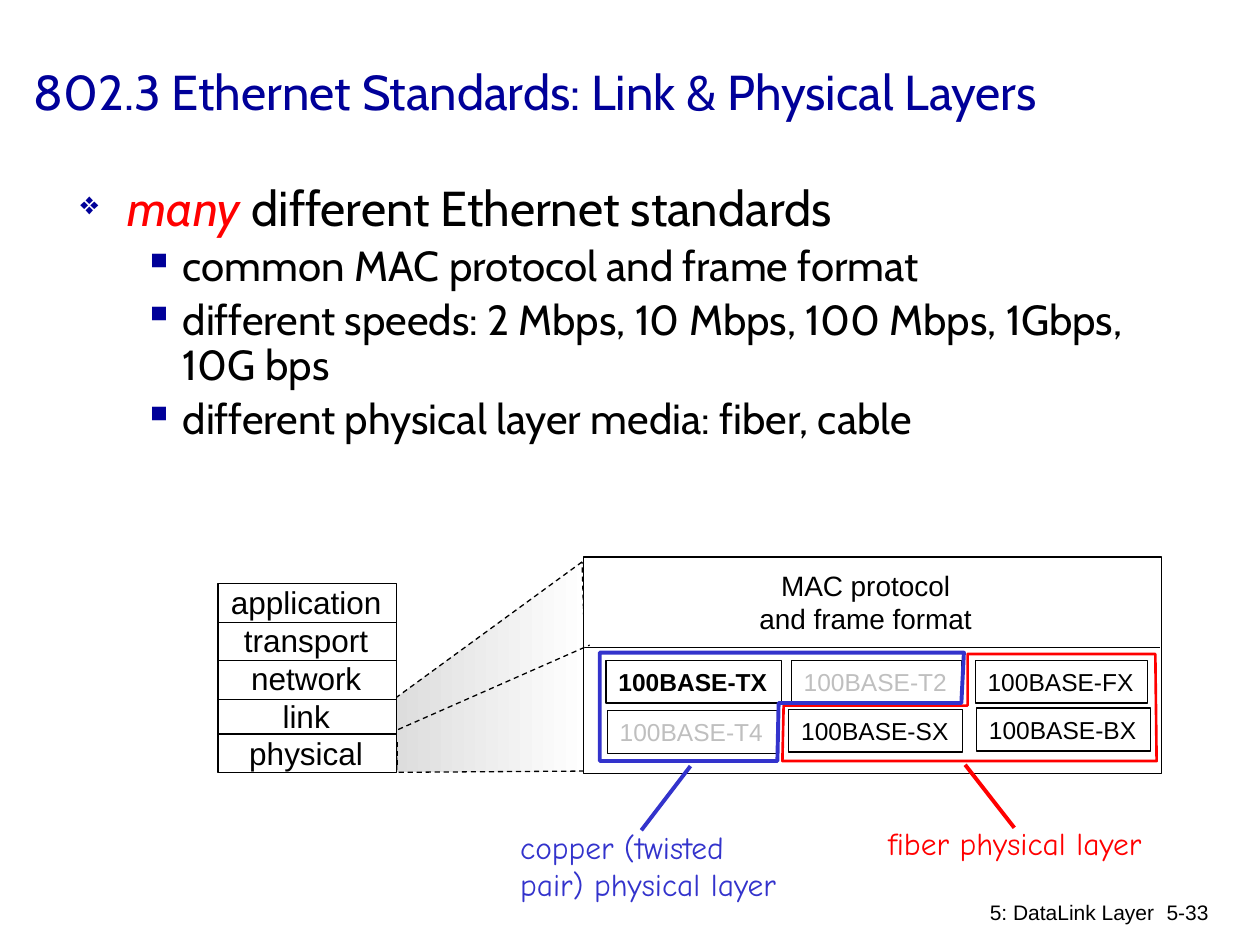
import lxml.etree
import pptx
import pptx.dml.color
import pptx.enum.dml
import pptx.enum.shapes
import pptx.enum.text
import pptx.oxml.ns
import pptx.util

Pt = pptx.util.Pt
RGBColor = pptx.dml.color.RGBColor
PP_ALIGN = pptx.enum.text.PP_ALIGN
qn = pptx.oxml.ns.qn

NAVY = RGBColor(0x00, 0x00, 0x99)
BLACK = RGBColor(0x00, 0x00, 0x00)
WHITE = RGBColor(0xFF, 0xFF, 0xFF)
RED = RGBColor(0xFF, 0x00, 0x00)
BLUE = RGBColor(0x33, 0x33, 0xCC)
MUTED = RGBColor(0xBF, 0xBF, 0xBF)
SHADE = RGBColor(0xDD, 0xDD, 0xDD)


class SlideBuilder:
    heading_font = "Cabin"
    label_font = "Arial"
    note_font = "Comic Neue"
    thin = 0.75

    def __init__(self, slide):
        self.slide = slide

    def style_font(self, font, name, size, color, bold=False):
        font.name, font.size, font.bold = name, Pt(size), bold
        font.color.rgb = color

    def style_line(self, line, color, width, dashed=False):
        line.color.rgb = color
        line.width = Pt(width)
        if dashed:
            line.dash_style = pptx.enum.dml.MSO_LINE.DASH

    def fill_text(self, frame, lines, name, size, color, align=PP_ALIGN.LEFT, bold=False):
        for index, line in enumerate(lines):
            paragraph = frame.paragraphs[0] if index == 0 else frame.add_paragraph()
            paragraph.text = line
            paragraph.alignment = align
            self.style_font(paragraph.font, name, size, color, bold)

    def text(self, box, lines, name, size, color, align=PP_ALIGN.LEFT, wrap=False):
        frame = self.slide.shapes.add_textbox(*map(Pt, box)).text_frame
        frame.word_wrap = wrap
        self.fill_text(frame, lines, name, size, color, align)
        return frame

    def bullet(self, paragraph, runs, level, size, symbol, symbol_size, margin, hanging):
        """Fill a bulleted paragraph from (text, color, italic) runs."""
        paragraph.level = level
        paragraph.line_spacing = 0.9
        paragraph.space_before = Pt(size * 0.2)
        properties = paragraph._p.get_or_add_pPr()
        properties.set("marL", str(Pt(margin)))
        properties.set("indent", str(-Pt(hanging)))
        bullet_color = lxml.etree.SubElement(properties, qn("a:buClr"))
        lxml.etree.SubElement(bullet_color, qn("a:srgbClr"), val=str(NAVY))
        lxml.etree.SubElement(properties, qn("a:buSzPct"), val=str(symbol_size * 1000))
        lxml.etree.SubElement(properties, qn("a:buChar"), char=symbol)
        for text, color, italic in runs:
            run = paragraph.add_run()
            run.text = text
            self.style_font(run.font, self.heading_font, size, color)
            run.font.italic = italic

    def rectangle(self, box, fill=None):
        shape = self.slide.shapes.add_shape(
            pptx.enum.shapes.MSO_SHAPE.RECTANGLE, *map(Pt, box))
        shape.shadow.inherit = False
        if fill is None:
            shape.fill.background()
        else:
            shape.fill.solid()
            shape.fill.fore_color.rgb = fill
        self.style_line(shape.line, BLACK, self.thin)
        return shape

    def standard(self, box, name, color=BLACK, bold=False):
        frame = self.rectangle(box).text_frame
        frame.word_wrap = False
        self.fill_text(frame, [name], self.label_font, 14, color, bold=bold)

    def line(self, start, end, color=BLACK, width=thin, dashed=False):
        connector = self.slide.shapes.add_connector(
            pptx.enum.shapes.MSO_CONNECTOR.STRAIGHT, *map(Pt, start + end))
        self.style_line(connector.line, color, width, dashed)
        lxml.etree.SubElement(connector._element.spPr, qn("a:effectLst"))

    def outline(self, points, color, width, dashed=False, close=True):
        first, *rest = [(Pt(x), Pt(y)) for x, y in points]
        builder = self.slide.shapes.build_freeform(*first)
        builder.add_line_segments(rest, close=close)
        shape = builder.convert_to_shape()
        shape.shadow.inherit = False
        shape.fill.background()
        self.style_line(shape.line, color, width, dashed)
        return shape


def add_text(builder):
    title = builder.text((12.24, 7.2, 686.16, 90),
                         ["802.3 Ethernet Standards: Link & Physical Layers"],
                         builder.heading_font, 28, NAVY, wrap=True)
    title.vertical_anchor = pptx.enum.text.MSO_ANCHOR.MIDDLE

    body = builder.slide.shapes.add_textbox(
        Pt(38.88), Pt(101.52), Pt(612), Pt(165.6)).text_frame
    body.word_wrap = True
    builder.bullet(body.paragraphs[0],
                   [("many", RED, True), (" different Ethernet standards", BLACK, False)],
                   0, 28, "❖", 65, 27, 27)
    for point in ("common MAC protocol and frame format",
                  "different speeds: 2 Mbps, 10 Mbps, 100 Mbps, 1Gbps, 10G bps",
                  "different physical layer media: fiber, cable"):
        builder.bullet(body.add_paragraph(), [(point, BLACK, False)],
                       1, 24, "▪", 100, 58.5, 22.5)

    for box, text in (((438.48, 510.48, 228.24, 36), "5: DataLink Layer"),
                      ((644.4, 510.48, 53.28, 36), "5-33")):
        builder.text(box, [text], builder.label_font, 12, BLACK, PP_ALIGN.RIGHT, wrap=True)


def add_protocol_stack(builder):
    zoom = builder.outline([(332.64, 321.12), (226.08, 398.88), (226.8, 441.36),
                            (336.24, 440.64)],
                           BLACK, builder.thin, dashed=True)
    zoom.fill.gradient()
    zoom.fill.gradient_angle = 0
    for stop, color in zip(zoom.fill.gradient_stops, (SHADE, WHITE)):
        stop.color.rgb = color

    left, right = 124.56, 226.8
    builder.rectangle((left, 333.36, right - left, 108), WHITE)
    builder.text((left, 329.76, 100.8, 115.2),
                 ["application", "transport", "network", "link", "physical"],
                 builder.label_font, 18, BLACK, PP_ALIGN.CENTER)
    for y in (355.68, 377.28, 399.6, 419.4):
        builder.line((left, y), (right, y))
    for x, y in ((left, 425.5), (right, 424.1)):
        builder.line((x, y), (x, y + 13.7), dashed=True)


def add_ethernet_layers(builder):
    builder.rectangle((333.36, 318.24, 330.48, 123.84), WHITE)
    builder.line((334.08, 370.08), (663.12, 370.08))
    builder.text((426.24, 321.12, 136.8, 46.08), ["MAC protocol", "and frame format"],
                 builder.label_font, 16, BLACK, PP_ALIGN.CENTER)
    builder.outline([(227.52, 416.88), (336.96, 368.64)],
                    BLACK, builder.thin, dashed=True, close=False)

    height = 24.48
    builder.standard((346.32, 377.28, 100.08, height), "100BASE-TX", bold=True)
    for x, y, width, name, color in (
            (347.04, 406.08, 97.2, "100BASE-T4", MUTED),
            (452.16, 377.28, 97.2, "100BASE-T2", MUTED),
            (450.72, 405.36, 99.36, "100BASE-SX", BLACK),
            (557.28, 377.28, 98.64, "100BASE-FX", BLACK),
            (558, 404.64, 99.36, "100BASE-BX", BLACK)):
        builder.standard((x, y, width, height), name, color)


def add_media_notes(builder):
    builder.outline([(552.96, 373.68), (552.96, 403.2), (447.84, 403.2), (447.12, 434.88),
                     (660.96, 434.88), (660.24, 373.68)], RED, 1.5)
    builder.line((551.52, 437.04), (579.6, 473.04), RED, 2.25)
    builder.text((500.4, 467.28, 177.12, 28.8), ["fiber physical layer"],
                 builder.note_font, 18, RED)

    builder.outline([(550.8, 372.96), (549.36, 401.76), (444.96, 401.76), (444.24, 434.88),
                     (342.72, 434.88), (342.72, 372.96)], BLUE, 2.25)
    builder.line((394.56, 437.76), (366.48, 474.48), BLUE, 2.25)
    builder.text((290.16, 469.44, 172.8, 50.4), ["copper (twisted", "pair) physical layer"],
                 builder.note_font, 18, BLUE)


def main():
    presentation = pptx.Presentation()
    presentation.slide_width, presentation.slide_height = Pt(720), Pt(540)
    builder = SlideBuilder(presentation.slides.add_slide(presentation.slide_layouts[6]))
    add_text(builder)
    add_protocol_stack(builder)
    add_ethernet_layers(builder)
    add_media_notes(builder)
    presentation.save("out.pptx")


if __name__ == "__main__":
    main()
